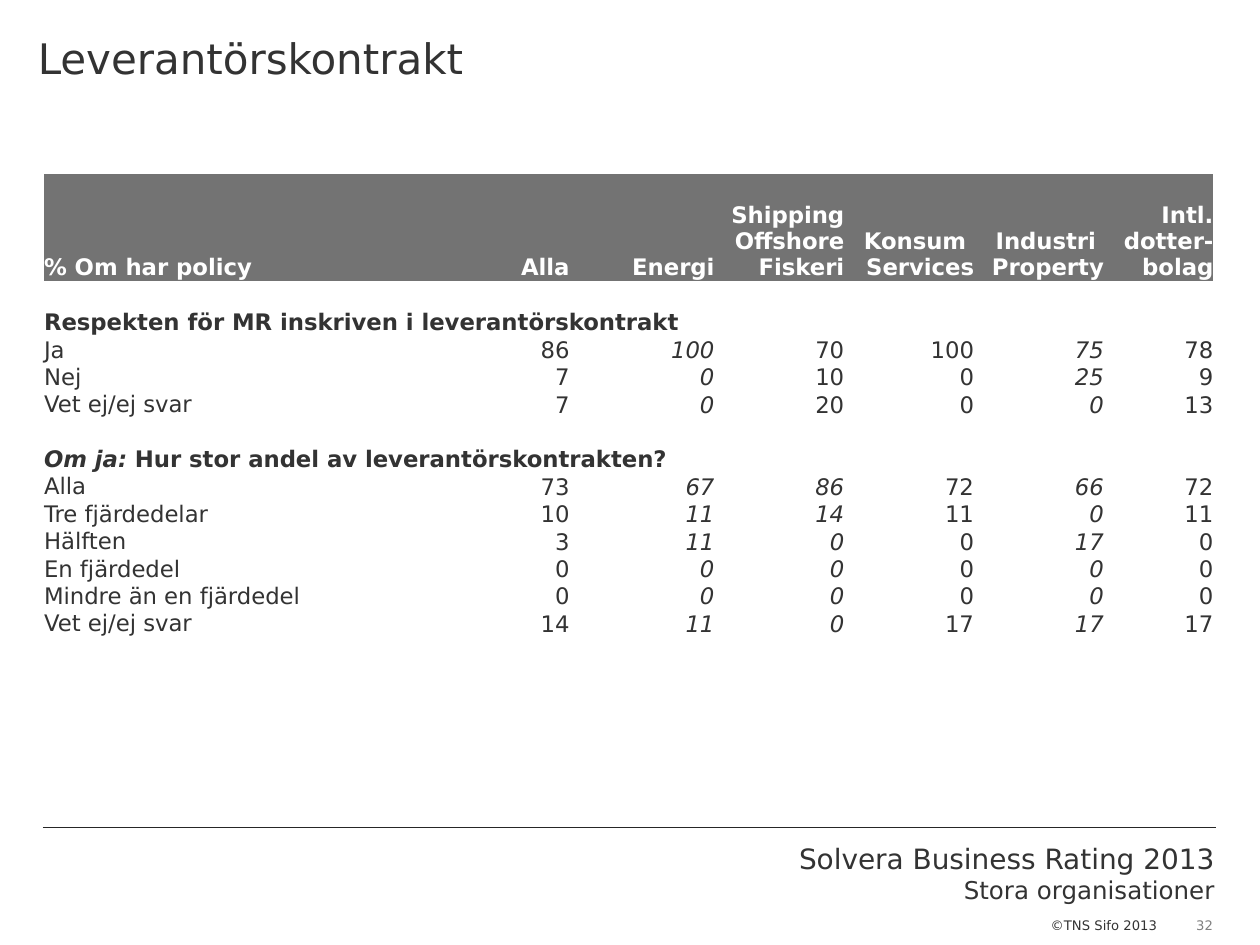
from dataclasses import dataclass

from lxml import etree
from pptx import Presentation, util as u
from pptx.dml.color import RGBColor
from pptx.enum import shapes, text
from pptx.oxml.ns import qn


@dataclass(frozen=True)
class Theme:
    font: str = "DejaVu Sans"
    ink: str = "333333"
    rule: str = "262626"
    band: str = "737373"
    white: str = "FFFFFF"
    muted: str = "808080"
    title: float = 24
    brand: float = 16
    sub: float = 14
    body: float = 13
    small: float = 7.5


T = Theme()
LEFT, RIGHT, CENTER = text.PP_ALIGN.LEFT, text.PP_ALIGN.RIGHT, text.PP_ALIGN.CENTER
NO_GRID_STYLE = "{2D5ABB26-0587-4C30-8999-92F81FD0307C}"

prs = Presentation()
prs.slide_width, prs.slide_height = u.Inches(10), u.Inches(7.5)
W, H = prs.slide_width, prs.slide_height
s = prs.slides.add_slide(prs.slide_layouts[6])


def share(x, y, w, h):
    """Turn percentages of the slide's width and height into lengths."""
    return [round(v * side / 100) for v, side in zip((x, y, w, h), (W, H, W, H))]


def style(p, size, color=T.ink, align=LEFT, bold=False, italic=False):
    p.alignment = align
    for r in p.runs:
        r.font.name, r.font.size = T.font, u.Pt(size)
        r.font.bold, r.font.italic = bold, italic
        r.font.color.rgb = RGBColor.from_string(color)


# Title and footer: place, insets in inches, wrap, alignment, colour, lines with sizes
DEFAULT_INSETS = (0.1, 0.05, 0.1, 0.05)
boxes = [
    ((94.7, 97.07, 1.8, 1.73), (0, 0, 0, 0), False, CENTER, T.muted,
     [("32", T.small)]),
    ((51.6, 88.4, 45.8, 8.13), DEFAULT_INSETS, True, RIGHT, T.ink,
     [("Solvera Business Rating 2013", T.brand), ("Stora organisationer", T.sub)]),
    ((82.4, 96.4, 11, 3.07), DEFAULT_INSETS, True, LEFT, T.ink,
     [("©TNS Sifo 2013", T.small)]),
    ((0, 0, 100, 15.47), (0.3, 0.26, 0.3, 0), True, LEFT, T.ink,
     [("Leverantörskontrakt", T.title)]),
]
for place, insets, wrap, align, color, lines in boxes:
    tf = s.shapes.add_textbox(*share(*place)).text_frame
    tf.word_wrap = wrap
    tf.margin_left, tf.margin_top, tf.margin_right, tf.margin_bottom = map(u.Inches, insets)
    tf.text = "\n".join(line for line, size in lines)
    for p, (line, size) in zip(tf.paragraphs, lines):
        style(p, size, color, align)

x1, y1, x2, y2 = share(3.4, 87.6, 96.5, 87.6)
rule = s.shapes.add_connector(shapes.MSO_CONNECTOR.STRAIGHT, x1, y1, x2, y2)
rule.line.color.rgb = RGBColor.from_string(T.rule)
rule.line.width = u.Pt(0.75)
etree.SubElement(rule.element.spPr, qn("a:effectLst"))

# Table: an empty row is a gap, a one-item row is a section heading
header = ["% Om har policy", "Alla", "Energi", "Shipping\nOffshore\nFiskeri",
          "Konsum \nServices", "Industri \nProperty", "Intl.\ndotter-\nbolag"]
contract = [
    ["Ja", 86, 100, 70, 100, 75, 78],
    ["Nej", 7, 0, 10, 0, 25, 9],
    ["Vet ej/ej svar", 7, 0, 20, 0, 0, 13],
]
portion = [
    ["Alla", 73, 67, 86, 72, 66, 72],
    ["Tre fjärdedelar", 10, 11, 14, 11, 0, 11],
    ["Hälften", 3, 11, 0, 0, 17, 0],
    ["En fjärdedel", 0, 0, 0, 0, 0, 0],
    ["Mindre än en fjärdedel", 0, 0, 0, 0, 0, 0],
    ["Vet ej/ej svar", 14, 11, 0, 17, 17, 17],
]
contract_heading = ["Respekten för MR inskriven i leverantörskontrakt"]
portion_heading = ["Om ja: ", "Hur stor andel av leverantörskontrakten?"]
rows = [header, [], contract_heading, *contract, [], portion_heading, *portion]
PORTION_ROW = rows.index(portion_heading)
HEADING_SPANS = {rows.index(contract_heading): 6, PORTION_ROW: 7}
COLS = [37, 4.7, 11.5, 10.3, 10.3, 10.3, 8.7]
HEAD_H, ROW_H = 11.3, 2.89

place = share(3.5, 18.4, sum(COLS), HEAD_H + ROW_H * (len(rows) - 1))
tb = s.shapes.add_table(len(rows), len(COLS), *place).table
tb.first_row = tb.horz_banding = False
tb._tbl.tblPr.find(qn("a:tableStyleId")).text = NO_GRID_STYLE
for col, width in zip(tb.columns, COLS):
    col.width = round(W * width / 100)

for i, row in enumerate(rows):
    tb.rows[i].height = round(H * (ROW_H if i else HEAD_H) / 100)
    for j in range(len(COLS)):
        cell = tb.cell(i, j)
        cell.margin_left = cell.margin_top = cell.margin_right = cell.margin_bottom = 0
        cell.vertical_anchor = text.MSO_ANCHOR.BOTTOM
        if i == 0:
            cell.fill.solid()
            cell.fill.fore_color.rgb = RGBColor.from_string(T.band)
        else:
            cell.fill.background()
        if len(row) < len(COLS):
            # Keeps an empty cell as low as a line of body text
            end = etree.SubElement(cell.text_frame.paragraphs[0]._p, qn("a:endParaRPr"))
            end.set("sz", str(T.body * 100))
            continue
        cell.text_frame.text = str(row[j])
        italic = i > 0 and (j in (2, 5) or (j == 3 and i > PORTION_ROW))
        for p in cell.text_frame.paragraphs:
            style(p, T.body, T.ink if i else T.white, RIGHT if j else LEFT, i == 0, italic)
            if i and j:
                p.line_spacing = 0.9

for i, span in HEADING_SPANS.items():
    cell = tb.cell(i, 0)
    cell.merge(tb.cell(i, span - 1))
    p = cell.text_frame.paragraphs[0]
    for part in rows[i]:
        p.add_run().text = part
    style(p, T.body, bold=True)
    p.runs[0].font.italic = i == PORTION_ROW

tb.cell(0, len(COLS) - 1).margin_top = u.Inches(0.2)

prs.save("out.pptx")
